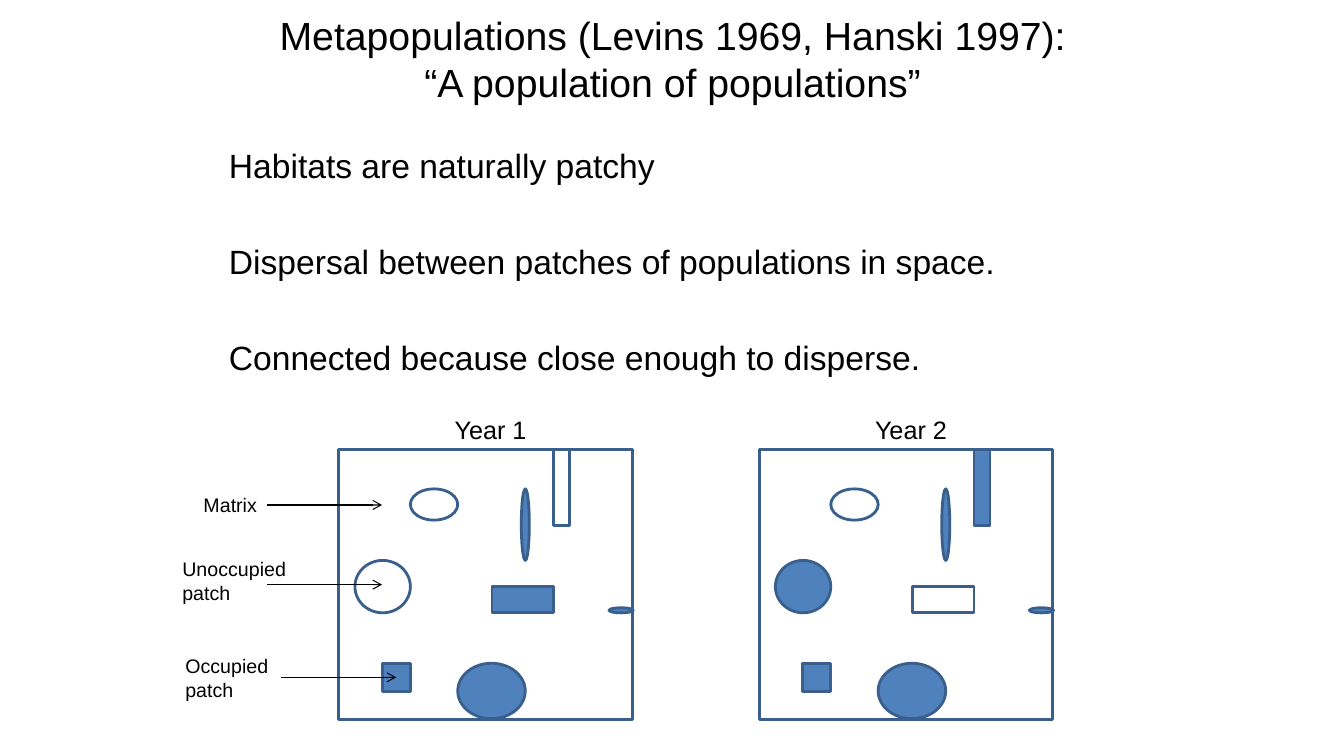
from copy import deepcopy

from lxml import etree
from pptx import Presentation
from pptx.dml.color import RGBColor
from pptx.enum.shapes import MSO_CONNECTOR, MSO_SHAPE
from pptx.enum.text import MSO_ANCHOR, MSO_AUTO_SIZE, PP_ALIGN
from pptx.oxml.ns import qn
from pptx.util import Emu, Pt

PX = 9144  # 100 px to the inch
BLACK = RGBColor(0x00, 0x00, 0x00)
WHITE = RGBColor(0xFF, 0xFF, 0xFF)
BLUE = RGBColor(0x4F, 0x81, 0xBD)
OUTLINE = RGBColor(0x3A, 0x5F, 0x8C)
RECT, OVAL = MSO_SHAPE.RECTANGLE, MSO_SHAPE.OVAL
STRAIGHT = MSO_CONNECTOR.STRAIGHT
TOP, MIDDLE = MSO_ANCHOR.TOP, MSO_ANCHOR.MIDDLE
LEFT, CENTER = PP_ALIGN.LEFT, PP_ALIGN.CENTER
NO_FIT, GROW = MSO_AUTO_SIZE.NONE, MSO_AUTO_SIZE.SHAPE_TO_FIT_TEXT
RIGHT_SIDE = 3

FRAME = (336, 446, 291, 268)
YEAR_STEP = 417
# preset, place in year 1, occupied in (year 1, year 2)
PATCHES = [
    (OVAL, (407, 485, 47, 31), (False, False)),
    (OVAL, (517, 485, 8, 71), (True, True)),
    (OVAL, (604, 603, 24, 5), (True, True)),
    (OVAL, (454, 658, 67, 55), (True, True)),
    (OVAL, (352, 556, 55, 52), (False, True)),
    (RECT, (379, 658, 28, 28), (True, True)),
    (RECT, (549, 446, 16, 75), (False, True)),
    (RECT, (488, 582, 61, 26), (True, False)),
]


def px(*lengths):
    return [Emu(length * PX) for length in lengths]


def write(frame, paragraphs, size, align=LEFT, anchor=TOP, wrap=True, fit=GROW, gap=0):
    """Fill a text frame; gap is the space before each paragraph but the first."""
    frame.word_wrap = wrap
    frame.auto_size = fit
    frame.vertical_anchor = anchor
    for index, wording in enumerate(paragraphs):
        paragraph = frame.add_paragraph() if index else frame.paragraphs[0]
        paragraph.text = wording
        properties = paragraph._p.get_or_add_pPr()
        properties.set("marL", "0")
        properties.set("indent", "0")
        etree.SubElement(properties, qn("a:buNone"))
        paragraph.alignment = align
        paragraph.space_before = Pt(gap if index else 0)
        for run in paragraph.runs:
            run.font.name = "Arial"
            run.font.size = Pt(size)
            run.font.color.rgb = BLACK
        for line_break in paragraph._p.findall(qn("a:br")):
            line_break.insert(0, deepcopy(paragraph.runs[0]._r.rPr))


class MetapopulationSlide:
    def __init__(self, deck):
        self.slide = deck.slides.add_slide(deck.slide_layouts[1])
        self.shapes = self.slide.shapes

    def placeholder(self, index, place, paragraphs, size, **style):
        holder = self.slide.placeholders[index]
        holder.left, holder.top, holder.width, holder.height = px(*place)
        write(holder.text_frame, paragraphs, size, fit=NO_FIT, **style)

    def label(self, place, wording, size, **style):
        box = self.shapes.add_textbox(*px(*place))
        write(box.text_frame, [wording], size, **style)
        return box

    def patch(self, group, preset, place, fill=None):
        patch = group.shapes.add_shape(preset, *px(*place))
        patch.shadow.inherit = False
        if fill is None:
            patch.fill.background()
        else:
            patch.fill.solid()
            patch.fill.fore_color.rgb = fill
        patch.line.color.rgb = OUTLINE
        patch.line.width = Pt(2)

    def landscape(self, year):
        """Draw one framed habitat map; year counts from 0."""
        group = self.shapes.add_group_shape()
        shift = year * YEAR_STEP
        self.patch(group, RECT, (FRAME[0] + shift, *FRAME[1:]))
        for preset, (left, *rest), occupied in PATCHES:
            self.patch(group, preset, (left + shift, *rest), BLUE if occupied[year] else WHITE)

    def arrow(self, start, end, y, source=None):
        arrow = self.shapes.add_connector(STRAIGHT, *px(start, y, end, y))
        if source is not None:
            arrow.begin_connect(source, RIGHT_SIDE)
        arrow.line.color.rgb = BLACK
        arrow.line.width = Pt(0.75)
        etree.SubElement(arrow.line._get_or_add_ln(), qn("a:tailEnd"), type="arrow")
        etree.SubElement(arrow._element.spPr, qn("a:effectLst"))


def main():
    deck = Presentation()
    deck.slide_width, deck.slide_height = px(1333, 750)
    page = MetapopulationSlide(deck)

    page.placeholder(
        0, (217, 0, 900, 115),
        ["Metapopulations (Levins 1969, Hanski 1997):\n“A population of populations”"],
        28, align=CENTER, anchor=MIDDLE)
    page.placeholder(
        1, (217, 139, 900, 495),
        ["Habitats are naturally patchy",
         "Dispersal between patches of populations in space.",
         "Connected because close enough to disperse."],
        24, gap=39.6)

    for year in range(2):
        page.landscape(year)
    for year in range(2):
        page.label((441 + year * YEAR_STEP, 406, 92, 40), f"Year {year + 1}", 18, wrap=False)

    matrix = page.label((192, 484, 73, 34), "Matrix", 14, wrap=False)
    page.arrow(265, 379, 501, source=matrix)
    page.arrow(265, 379, 580)
    page.arrow(279, 393, 672)
    page.label((171, 548, 136, 57), "Unoccupied patch", 14)
    page.label((174, 644, 136, 57), "Occupied patch", 14)

    deck.save("out.pptx")


if __name__ == "__main__":
    main()
